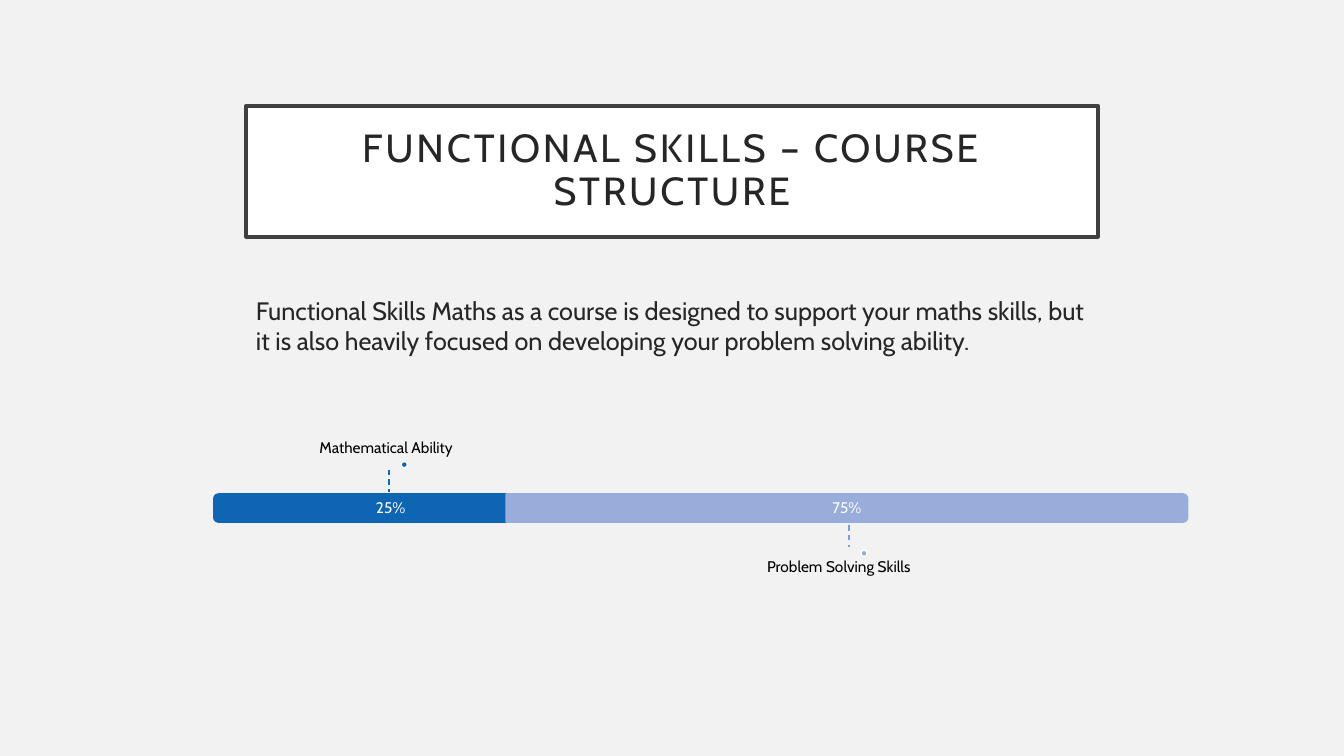
from lxml import etree
from pptx import Presentation
from pptx.dml.color import RGBColor
from pptx.enum.dml import MSO_LINE
from pptx.enum.shapes import MSO_CONNECTOR, MSO_SHAPE
from pptx.enum.text import MSO_ANCHOR, MSO_AUTO_SIZE, PP_ALIGN
from pptx.oxml.ns import qn
from pptx.util import Inches, Pt

COLORS = {
    "background": "F2F2F2",
    "white": "FFFFFF",
    "black": "000000",
    "ink": "262626",
    "frame": "404040",
    "maths": "0E65B4",
    "maths_leader": "0E6ABD",
    "solving": "98ADD9",
    "solving_leader": "6EA1EC",
}
BAR_HEIGHT = 0.28


def color(key):
    return RGBColor.from_string(COLORS[key])


def write(holder, text, size, ink="black", align=PP_ALIGN.CENTER, anchor=MSO_ANCHOR.MIDDLE,
          insets=(0, 0, 0, 0), line_spacing=0.9, space_before=0, tracking=None):
    """Fill a shape with one paragraph; insets run left, top, right, bottom."""
    frame = holder.text_frame
    frame.word_wrap = True
    frame.auto_size = MSO_AUTO_SIZE.NONE
    frame.vertical_anchor = anchor
    (frame.margin_left, frame.margin_top,
     frame.margin_right, frame.margin_bottom) = map(Inches, insets)
    paragraph = frame.paragraphs[0]
    paragraph.alignment = align
    paragraph.line_spacing = line_spacing
    paragraph.space_before = Pt(space_before)
    run = paragraph.add_run()
    run.text = text
    run.font.name = "Cabin"
    run.font.size = Pt(size)
    run.font.color.rgb = color(ink)
    if tracking:
        run._r.get_or_add_rPr().set("spc", str(tracking * 100))


def add_text(slide, box, text, size, **style):
    write(slide.shapes.add_textbox(*map(Inches, box)), text, size, **style)


def paint(shape, fill, outline, width=1):
    shape.fill.solid()
    shape.fill.fore_color.rgb = color(fill)
    shape.line.color.rgb = color(outline)
    shape.line.width = Pt(width)


def add_filled(slide, preset, box, fill, outline):
    shape = slide.shapes.add_shape(preset, *map(Inches, box))
    shape.shadow.inherit = False
    paint(shape, fill, outline)
    return shape


def add_title(slide, box):
    title = slide.shapes.title
    title.left, title.top, title.width, title.height = map(Inches, box)
    paint(title, "white", "frame", 2.5)
    write(title, "FUNCTIONAL SKILLS – COURSE STRUCTURE", 28, ink="ink",
          insets=(0.2, 0.2, 0.2, 0.2), tracking=2)


def add_intro(slide, box):
    add_text(slide, box,
             "Functional Skills Maths as a course is designed to support your maths skills, "
             "but it is also heavily focused on developing your problem solving ability.",
             18, ink="ink", align=PP_ALIGN.LEFT, anchor=MSO_ANCHOR.TOP,
             insets=(0.1, 0.05, 0.1, 0.05), line_spacing=1, space_before=10)


def add_leader(slide, x, top, tone):
    leader = slide.shapes.add_connector(
        MSO_CONNECTOR.STRAIGHT, *map(Inches, (x, top, x, top + 0.22)))
    leader.line.color.rgb = color(tone)
    leader.line.width = Pt(1)
    leader.line.dash_style = MSO_LINE.DASH
    etree.SubElement(leader._element.spPr, qn("a:effectLst"))


def add_segment(slide, box, share, label, tone, leader_x, above):
    """Draw one part of the bar, rounded at its outer end, with a label above or below it."""
    left, top, width, height = box
    center, middle = left + width / 2, top + height / 2
    upright = (center - height / 2, middle - width / 2, height, width)
    bar = add_filled(slide, MSO_SHAPE.ROUND_2_SAME_RECTANGLE, upright, tone, tone)
    bar.rotation = 270 if above else 90
    add_text(slide, (left, top + 0.02, width, height - 0.04), share, 11, ink="white")

    label_width, label_height = 4.52, 0.98
    label_left = leader_x - (0.03 if above else 0.1) - label_width / 2
    label_top = top - 0.28 - label_height if above else top + 0.56
    add_text(slide, (label_left, label_top, label_width, label_height), label, 11,
             anchor=MSO_ANCHOR.BOTTOM if above else MSO_ANCHOR.TOP,
             insets=(0, 0, 0, 0.09) if above else (0, 0.09, 0, 0))

    add_leader(slide, leader_x, top - 0.24 if above else top + 0.31, tone + "_leader")
    dot_top = top - 0.32 if above else top + 0.56
    add_filled(slide, MSO_SHAPE.OVAL, (leader_x + 0.12, dot_top, 0.06, 0.06), tone, "white")


def add_share_bar(slide, left, top):
    add_segment(slide, (left, top, 3.51, BAR_HEIGHT), "25%", "Mathematical Ability",
                "maths", left + 1.74, above=True)
    add_segment(slide, (left + 2.9, top, 6.76, BAR_HEIGHT), "75%", "Problem Solving Skills",
                "solving", left + 6.3, above=False)


def main():
    deck = Presentation()
    deck.slide_width, deck.slide_height = Inches(13.33), Inches(7.5)
    slide = deck.slides.add_slide(deck.slide_layouts.get_by_name("Title Only"))
    slide.background.fill.solid()
    slide.background.fill.fore_color.rgb = color("background")
    add_title(slide, (2.44, 1.05, 8.45, 1.3))
    add_intro(slide, (2.44, 2.88, 8.45, 3.39))
    add_share_bar(slide, 2.12, 4.9)
    deck.save("out.pptx")


if __name__ == "__main__":
    main()
